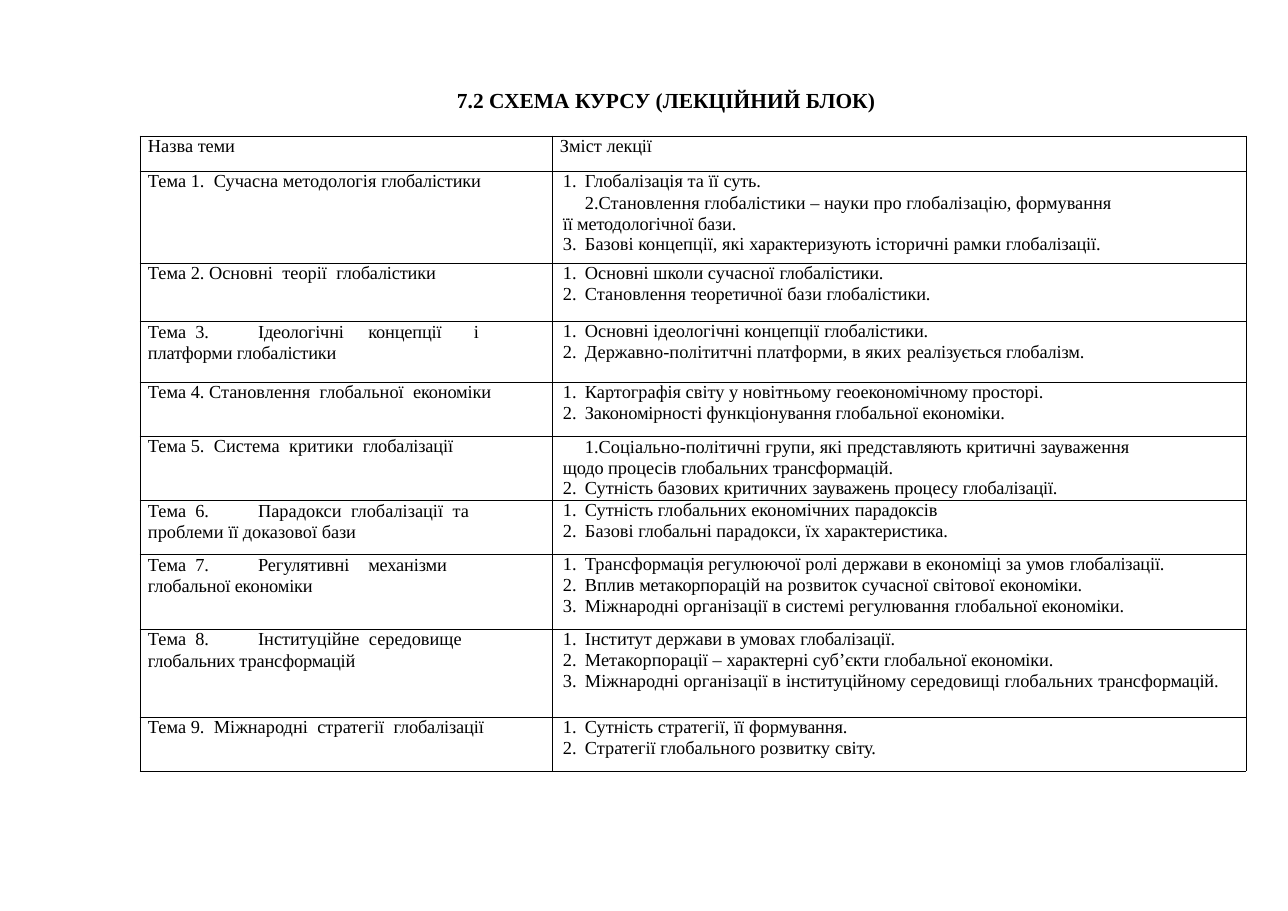
import dataclasses

import lxml.etree
import pptx
import pptx.dml.color
import pptx.oxml.ns
import pptx.util

PX = 8300  # EMU in one px


@dataclasses.dataclass(frozen=True)
class Theme:
    font: str = "Times New Roman"
    ink: str = "000000"
    title_size: int = 14
    body_size: int = 12
    border: float = 0.5
    tight: float = -0.1
    wide: float = 3


@dataclasses.dataclass(frozen=True)
class Line:
    """Text: | switches tight tracking on and off, ~ is a wide space."""
    text: str
    right: int = 0  # right margin that makes the line wrap
    tabs: tuple = ()


THEME = Theme()
COLUMNS = (412, 694)

# Each row: height, topic, lecture items
TOPICS = [
    (92, Line("Тема 1.~Сучасна методологія |глобалістики"), [
        Line("Глобалізація та її |суть."),
        Line("Становлення глобалістики – науки про глобалізацію, формування "
             "|її методологічної бази.", 125),
        Line("Базові концепції, які |характеризують |історичні рамки |глобалізації.")]),
    (58, Line("Тема 2. Основні~теорії~|глобалістики"), [
        Line("Основні школи сучасної |глобалістики."),
        Line("Становлення |теоретичної |бази |глобалістики.")]),
    (61, Line("Тема~|3.\tІдеологічні\tконцепції\tі\tплатформи глобалістики",
              70, (90, 198, 293, 317)), [
        Line("Основні ідеологічні концепції |глобалістики."),
        Line("Державно-політитчні платформи, в яких |реалізується глобалізм.")]),
    (54, Line("Тема 4. Становлення~глобальної~|економіки"), [
        Line("Картографія світу у новітньому |геоекономічному просторі."),
        Line("|Закономірності функціонування глобальної економіки.")]),
    (64, Line("Тема 5.~Система~критики~|глобалізації"), [
        Line("Соціально-політичні групи, які |представляють |критичні зауваження"
             "| щодо |процесів |глобальних трансформацій.", 105),
        Line("Сутність базових критичних |зауважень |процесу |глобалізації.")]),
    (54, Line("Тема~|6.|\tПарадокси~глобалізації~та~проблеми |її |доказової |бази",
              14, (88,)), [
        Line("Сутність глобальних економічних |парадоксів"),
        Line("Базові |глобальні |парадокси, їх |характеристика.")]),
    (75, Line("Тема~|7.\tРегулятивні\tмеханізми\tглобальної економіки",
              70, (97, 215, 320)), [
        Line("Трансформація регулюючої ролі держави в економіці за умов |глобалізації."),
        Line("Вплив |метакорпорацій |на розвиток сучасної світової |економіки."),
        Line("Міжнародні організації в системі регулювання |глобальної економіки.")]),
    (88, Line("Тема~|8.|\tІнституційне~середовище |глобальних трансформацій",
              70, (97,)), [
        Line("Інститут держави в умовах |глобалізації."),
        Line("Метакорпорації – |характерні |суб’єкти |глобальної економіки."),
        Line("Міжнародні організації в |інституційному |середовищі глобальних "
             "|трансформацій.")]),
    (54, Line("Тема 9.~Міжнародні~стратегії~|глобалізації"), [
        Line("Сутність стратегії, її |формування."),
        Line("Стратегії глобального розвитку |світу.")]),
]


def px(length):
    return pptx.util.Emu(length * PX)


def add_element(parent, tag, **attributes):
    name = pptx.oxml.ns.qn("a:" + tag)
    return lxml.etree.SubElement(parent, name, attributes)


# Text
def add_span(para, text, size, bold=False, tracking=0):
    span = para.add_run()
    span.text = text
    span.font.name = THEME.font
    span.font.size = pptx.util.Pt(size)
    span.font.bold = bold
    span.font.color.rgb = pptx.dml.color.RGBColor.from_string(THEME.ink)
    if tracking:
        span.font._element.set("spc", str(round(tracking * 100)))


def add_spans(para, text, size):
    for index, part in enumerate(text.split("|")):
        tracking = THEME.tight if index % 2 else 0
        for number, words in enumerate(part.split("~")):
            if number:
                add_span(para, " ", size, tracking=THEME.wide)
            if words:
                add_span(para, words, size, tracking=tracking)


def fill_para(para, line, spacing, left, indent=0, numbered=False):
    properties = para._p.get_or_add_pPr()
    for name, length in (("marL", left), ("marR", line.right), ("indent", indent)):
        properties.set(name, str(px(length)))
    if numbered:
        add_element(properties, "buFont", typeface=THEME.font)
        add_element(properties, "buAutoNum", type="arabicPeriod")
    if line.tabs:
        tab_list = add_element(properties, "tabLst")
        for stop in line.tabs:
            add_element(tab_list, "tab", pos=str(px(stop)), algn="l")
    para.line_spacing = pptx.util.Pt(spacing)
    add_spans(para, line.text, THEME.body_size)


def add_title(page, text):
    box = page.shapes.add_textbox(px(456), px(84), px(422), px(29))
    frame = box.text_frame
    frame.word_wrap = True
    frame.margin_left, frame.margin_top = px(1), px(3)
    frame.margin_right = frame.margin_bottom = 0
    add_span(frame.paragraphs[0], text, THEME.title_size, bold=True)


# Table cells
def style_cell(cell):
    cell.margin_left = cell.margin_right = cell.margin_top = cell.margin_bottom = 0
    properties = cell._tc.get_or_add_tcPr()
    for side in ("lnL", "lnR", "lnT", "lnB"):
        border = add_element(properties, side, w=str(pptx.util.Pt(THEME.border)))
        add_element(add_element(border, "solidFill"), "srgbClr", val=THEME.ink)
    cell.fill.background()


def write_label(cell, line):
    spacing = 13.8 if line.right else 13.4
    fill_para(cell.text_frame.paragraphs[0], line, spacing, left=8)


def write_items(cell, items):
    frame = cell.text_frame
    after_wrapped = False
    for index, line in enumerate(items):
        para = frame.add_paragraph() if index else frame.paragraphs[0]
        if line.right:
            fill_para(para, line, 13.8, left=11, indent=22, numbered=True)
            if index:
                para.space_before = pptx.util.Pt(0.7)
        else:
            if index == 0:
                spacing = 13.2
            elif after_wrapped:
                spacing = 13.4
            else:
                spacing = 14.1 if index == len(items) - 1 else 13.8
            fill_para(para, line, spacing, left=33, indent=-22, numbered=True)
        after_wrapped = bool(line.right)


def add_course_table(page):
    heights = [35] + [height for height, _, _ in TOPICS]
    table = page.shapes.add_table(len(heights), len(COLUMNS), px(140), px(136),
                                  px(sum(COLUMNS)), px(sum(heights))).table
    table.first_row = table.horz_banding = False
    for column, width in zip(table.columns, COLUMNS):
        column.width = px(width)
    for row, height in zip(table.rows, heights):
        row.height = px(height)
    for cell in table.iter_cells():
        style_cell(cell)
    write_label(table.cell(0, 0), Line("Назва |теми"))
    write_label(table.cell(0, 1), Line("Зміст |лекції"))
    for row, (_, topic, items) in enumerate(TOPICS, start=1):
        write_label(table.cell(row, 0), topic)
        write_items(table.cell(row, 1), items)


def main():
    deck = pptx.Presentation()
    deck.slide_width, deck.slide_height = px(1288), px(911)
    page = deck.slides.add_slide(deck.slide_layouts[6])
    add_title(page, "7.2 СХЕМА КУРСУ (ЛЕКЦІЙНИЙ БЛОК)")
    add_course_table(page)
    deck.save("out.pptx")


if __name__ == "__main__":
    main()
